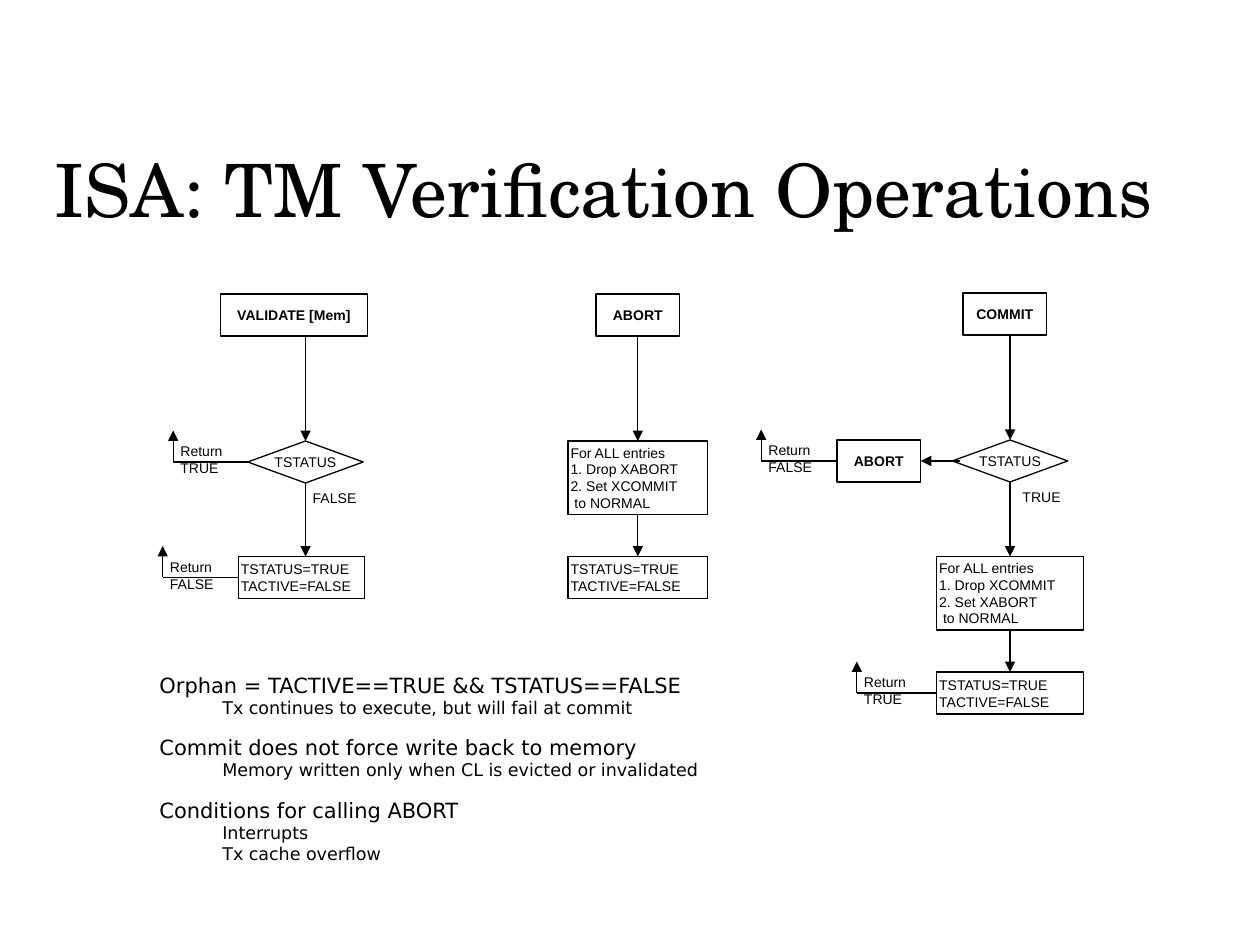
"""Build a slide of flowcharts for transactional memory verification operations."""
from dataclasses import dataclass

from lxml.etree import SubElement
from pptx import Presentation
from pptx.dml.color import RGBColor
from pptx.enum.shapes import MSO_CONNECTOR, MSO_SHAPE
from pptx.enum.text import MSO_ANCHOR, PP_ALIGN
from pptx.oxml.ns import qn
from pptx.util import Inches, Pt


@dataclass(frozen=True)
class Theme:
    ink: RGBColor = RGBColor(0, 0, 0)
    title_font: str = "TeX Gyre Schola"
    body_font: str = "DejaVu Sans"
    chart_font: str = "Arial"
    title_size: int = 42
    topic_size: int = 12
    detail_size: int = 10
    chart_size: int = 8
    line_width: float = 0.75


theme = Theme()
presentation = Presentation()
presentation.slide_width, presentation.slide_height = Inches(10), Inches(7.5)
slide = presentation.slides.add_slide(presentation.slide_layouts[6])
column = presentation.slide_width / 120
row = presentation.slide_height / 90
TOP, LEFT, BOTTOM, RIGHT = range(4)


def write(shape, lines, name=theme.chart_font, size=theme.chart_size, bold=False, align=PP_ALIGN.LEFT):
    frame = shape.text_frame
    frame.text = "\n".join(lines)
    frame.word_wrap = align == PP_ALIGN.LEFT
    for paragraph in frame.paragraphs:
        paragraph.alignment = align
        paragraph.font.name = name
        paragraph.font.size = Pt(size)
        paragraph.font.bold = bold
        paragraph.font.color.rgb = theme.ink
    return frame


def draw_line(start, finish, arrow=True):
    line = slide.shapes.add_connector(MSO_CONNECTOR.STRAIGHT, 0, 0, 0, 0)
    if isinstance(start[0], str):
        line.begin_connect(nodes[start[0]], start[1])
    else:
        line.begin_x, line.begin_y = round(start[0] * column), round(start[1] * row)
    if isinstance(finish[0], str):
        line.end_connect(nodes[finish[0]], finish[1])
    else:
        line.end_x, line.end_y = round(finish[0] * column), round(finish[1] * row)
    line.line.color.rgb = theme.ink
    line.line.width = Pt(theme.line_width)
    properties = line.line._get_or_add_ln()
    if arrow:
        SubElement(properties, qn("a:tailEnd"), type="triangle")
    SubElement(properties.getparent(), qn("a:effectLst"))


title = slide.shapes.add_textbox(round(4 * column), round(14.75 * row), round(116 * column), round(7.3 * row))
title_frame = write(title, ["ISA: TM Verification Operations"], theme.title_font, theme.title_size)
title_frame.vertical_anchor = MSO_ANCHOR.MIDDLE
title_frame.paragraphs[0].line_spacing = 0.9

topics = {
    "Orphan = TACTIVE==TRUE && TSTATUS==FALSE": ["Tx continues to execute, but will fail at commit"],
    "Commit does not force write back to memory": ["Memory written only when CL is evicted or invalidated"],
    "Conditions for calling ABORT": ["Interrupts", "Tx cache overflow"],
}
notes = slide.shapes.add_textbox(round(14 * column), round(64 * row), round(56.8 * column), round(22 * row))
note_lines = [line for topic, details in topics.items() for line in (topic, *details)]
notes_frame = write(notes, note_lines, theme.body_font, theme.detail_size)
for index, paragraph in enumerate(notes_frame.paragraphs):
    paragraph.line_spacing = 0.75
    if paragraph.text in topics:
        paragraph.font.size = Pt(theme.topic_size)
        paragraph.space_before = Pt(13 if index else 0)
    else:
        paragraph.space_before = Pt(2.8)
        paragraph._p.get_or_add_pPr().set("marL", str(round(6 * column)))

validate_axis, abort_axis, commit_axis = 29.1, 60.75, 96.2
status_lines = ["TSTATUS=TRUE", "TACTIVE=FALSE"]
operations = [
    ("validate", 21, 28, 14, "VALIDATE [Mem]"),
    ("abort", abort_axis - 4, 28, 8, "ABORT"),
    ("commit", 91.7, 27.9, 8, "COMMIT"),
    ("commit abort", 79.7, 41.9, 8, "ABORT"),
]
decisions = [
    ("validate test", validate_axis - 5.5, 42, 11, "TSTATUS"),
    ("commit test", commit_axis - 5.5, 41.9, 11, "TSTATUS"),
]
steps = [
    ("validate status", 22.7, 53, 12, status_lines),
    ("abort entries", abort_axis - 6.65, 42, 13.3,
     ["For ALL entries", "1. Drop XABORT", "2. Set XCOMMIT", " to NORMAL"]),
    ("abort status", abort_axis - 6.65, 53, 13.3, status_lines),
    ("commit entries", commit_axis - 7, 53, 14,
     ["For ALL entries", "1. Drop XCOMMIT", "2. Set XABORT", " to NORMAL"]),
    ("commit status", commit_axis - 7, 64, 14, status_lines),
]
nodes = {}
for group, preset in (
    (operations, MSO_SHAPE.FLOWCHART_PROCESS),
    (decisions, MSO_SHAPE.FLOWCHART_DECISION),
    (steps, MSO_SHAPE.FLOWCHART_PROCESS),
):
    for key, left, top, width, content in group:
        height = 7 if len(content) == 4 and group is steps else 4
        node = slide.shapes.add_shape(
            preset, round(left * column), round(top * row), round(width * column), round(height * row))
        node.shadow.inherit = False
        node.fill.background()
        node.line.color.rgb = theme.ink
        node.line.width = Pt(theme.line_width)
        if group is steps:
            frame = write(node, content)
            frame.margin_left = frame.margin_right = Inches(0.02)
        else:
            frame = write(node, [content], bold=group is operations, align=PP_ALIGN.CENTER)
        frame.vertical_anchor = MSO_ANCHOR.MIDDLE
        nodes[key] = node

for start, finish in (
    ((validate_axis, 32), ("validate test", TOP)),
    (("validate test", BOTTOM), (validate_axis, 53)),
    (("abort", BOTTOM), ("abort entries", TOP)),
    (("abort entries", BOTTOM), ("abort status", TOP)),
    ((commit_axis, 31.9), ("commit test", TOP)),
    (("commit test", BOTTOM), ("commit entries", TOP)),
    (("commit entries", BOTTOM), ("commit status", TOP)),
    ((91.4, 43.9), ("commit abort", RIGHT)),
):
    draw_line(start, finish)

labels = [(28.6, 46, 8.5, 2.9, "FALSE"), (96.2, 45.9, 8.5, 2.9, "TRUE")]
for key, corner, level, result in (
    ("validate test", 16.5, 44, "TRUE"),
    ("validate status", 15.5, 55, "FALSE"),
    ("commit abort", 72.5, 43.9, "FALSE"),
    ("commit status", 81.6, 66, "TRUE"),
):
    draw_line((corner, level), (key, LEFT), arrow=False)
    draw_line((corner, level), (corner, level - 3))
    labels.append((corner - 0.5, level - 2.4, 8.8, 4.4, f"Return {result}"))

for left, top, width, height, content in labels:
    label = slide.shapes.add_textbox(
        round(left * column), round(top * row), round(width * column), round(height * row))
    write(label, [content])

presentation.save("out.pptx")
